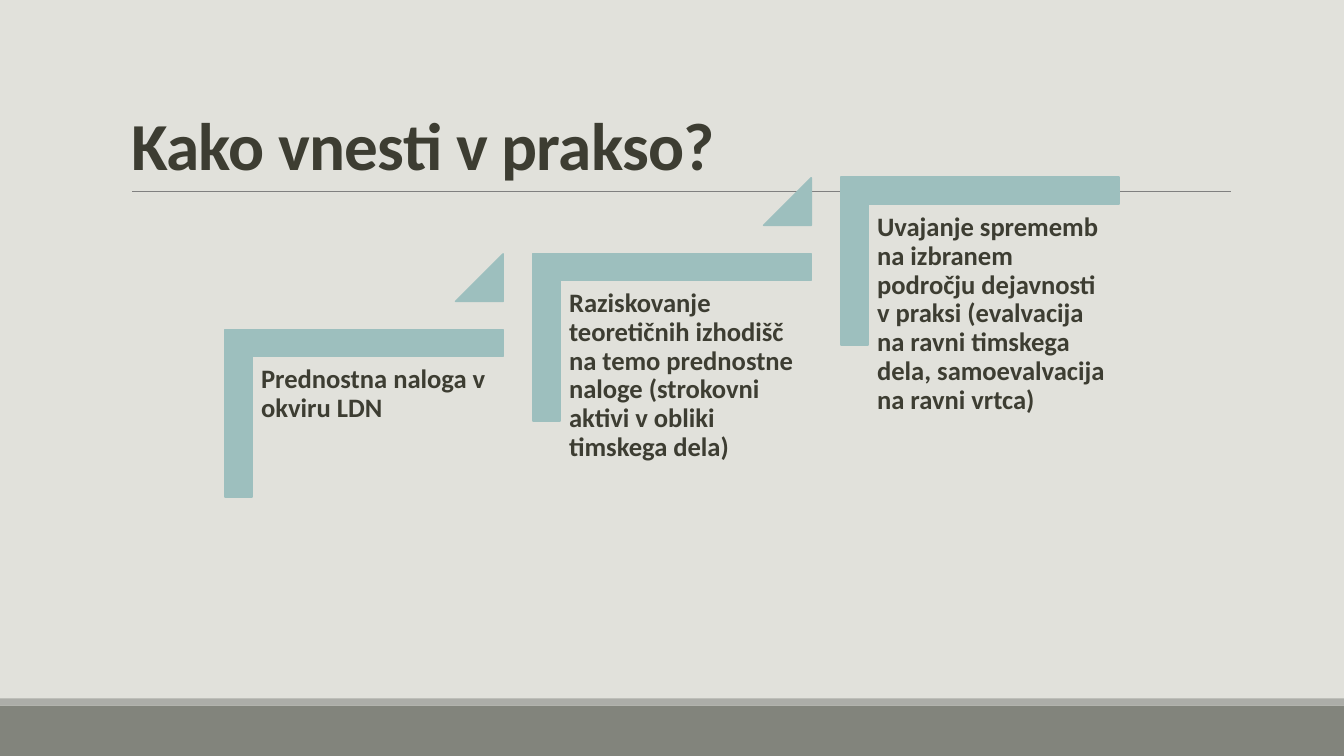
from pptx import Presentation, util as u
from pptx.dml.color import RGBColor
from pptx.enum import shapes, text
from pptx.oxml.ns import qn
from lxml import etree

BACKGROUND = RGBColor(0xE1, 0xE1, 0xDB)
INK = RGBColor(0x3D, 0x3D, 0x32)
TEAL = RGBColor(0x9D, 0xBF, 0xBE)
BAND = RGBColor(0x82, 0x84, 0x7C)
BAND_EDGE = RGBColor(0xAC, 0xAD, 0xA8)
RULE = RGBColor(0x80, 0x80, 0x80)
FONT = "Calibri"
WIDTH, HEIGHT = 13.33, 7.5

STEPS = [
    "Prednostna naloga v okviru LDN",
    "Raziskovanje teoretičnih izhodišč na temo prednostne naloge "
    "(strokovni aktivi v obliki timskega dela)",
    "Uvajanje sprememb na izbranem področju dejavnosti v praksi "
    "(evalvacija na ravni timskega dela, samoevalvacija na ravni vrtca)",
]


def inches(*lengths):
    return [u.Inches(length) for length in lengths]


def add_filled(slide, kind, box, color, outlined=False):
    shape = slide.shapes.add_shape(kind, *inches(*box))
    shape.shadow.inherit = False
    shape.fill.solid()
    shape.fill.fore_color.rgb = color
    if outlined:
        shape.line.color.rgb = color
        shape.line.width = u.Pt(1.25)
    else:
        shape.line.fill.background()
    return shape


def make_corner(shape, thickness):
    # The corner preset has no member in MSO_SHAPE
    geometry = shape._element.spPr.find(qn("a:prstGeom"))
    geometry.set("prst", "corner")
    guides = geometry.find(qn("a:avLst"))
    for name in ("adj1", "adj2"):
        etree.SubElement(guides, qn("a:gd"), name=name, fmla=f"val {round(thickness * 100000)}")


def format_text(paragraph, size, spacing):
    paragraph.alignment = text.PP_ALIGN.LEFT
    paragraph.line_spacing = spacing
    for run in paragraph.runs:
        run.font.name = FONT
        run.font.size = u.Pt(size)
        run.font.bold = True
        run.font.color.rgb = INK


def add_footer_band(slide, left, top, width, height):
    edge = 0.07
    rectangle = shapes.MSO_SHAPE.RECTANGLE
    add_filled(slide, rectangle, (left, top + edge, width, height - edge), BAND)
    add_filled(slide, rectangle, (left, top, width, edge), BAND_EDGE)


def add_heading(slide, left, top, width, height):
    # Rule below the title
    rule_y = top + height + 0.02
    rule = slide.shapes.add_connector(
        shapes.MSO_CONNECTOR.STRAIGHT,
        *inches(left + 0.11, rule_y, left + width + 0.01, rule_y))
    rule.line.color.rgb = RULE
    rule.line.width = u.Pt(0.5)
    etree.SubElement(rule._element.spPr, qn("a:effectLst"))

    # Title
    title = slide.shapes.title
    title.left, title.top, title.width, title.height = inches(left, top, width, height)
    frame = title.text_frame
    frame.text = "Kako vnesti v prakso?"
    frame.auto_size = text.MSO_AUTO_SIZE.NONE
    frame.vertical_anchor = text.MSO_ANCHOR.BOTTOM
    heading = frame.paragraphs[0]
    format_text(heading, 48, 0.85)
    heading.runs[0]._r.get_or_add_rPr().set("spc", "-50")


def add_step(slide, left, top, width, height, wording, has_next):
    # The corner is turned a quarter, so its sides are swapped about the centre
    turn = (width - height) / 2
    corner = add_filled(slide, shapes.MSO_SHAPE.RECTANGLE,
                        (left + turn, top - turn, height, width), TEAL, outlined=True)
    make_corner(corner, 0.161)
    corner.rotation = 90

    # Wording inside the corner
    label = slide.shapes.add_textbox(*inches(left + 0.28, top + 0.28, 2.5, 2.19))
    frame = label.text_frame
    frame.word_wrap = True
    frame.margin_left = frame.margin_right = u.Inches(0.08)
    frame.margin_top = frame.margin_bottom = u.Inches(0.08)
    frame.text = wording
    format_text(frame.paragraphs[0], 19, 0.9)

    # Marker pointing up to the next step
    if has_next:
        side = 0.47
        marker = add_filled(slide, shapes.MSO_SHAPE.ISOSCELES_TRIANGLE,
                            (left + width - side, top - 0.75, side, side), TEAL, outlined=True)
        marker.adjustments[0] = 1


def add_staircase(slide, left, top, width, height):
    step_width, step_height = 2.76, 1.66
    gaps = len(STEPS) - 1
    run = (width - step_width) / gaps
    rise = (height - step_height) / gaps
    for index, wording in enumerate(STEPS):
        add_step(slide, left + index * run, top + (gaps - index) * rise,
                 step_width, step_height, wording, index < gaps)


def main():
    deck = Presentation()
    deck.slide_width, deck.slide_height = inches(WIDTH, HEIGHT)
    slide = deck.slides.add_slide(deck.slide_layouts.get_by_name("Title Only"))
    slide.background.fill.solid()
    slide.background.fill.fore_color.rgb = BACKGROUND

    add_footer_band(slide, 0, HEIGHT - 0.57, WIDTH, 0.57)
    add_heading(slide, 1.2, 0.29, 11, 1.59)
    add_staircase(slide, 2.23, 1.76, 8.87, 3.17)
    deck.save("out.pptx")


if __name__ == "__main__":
    main()
